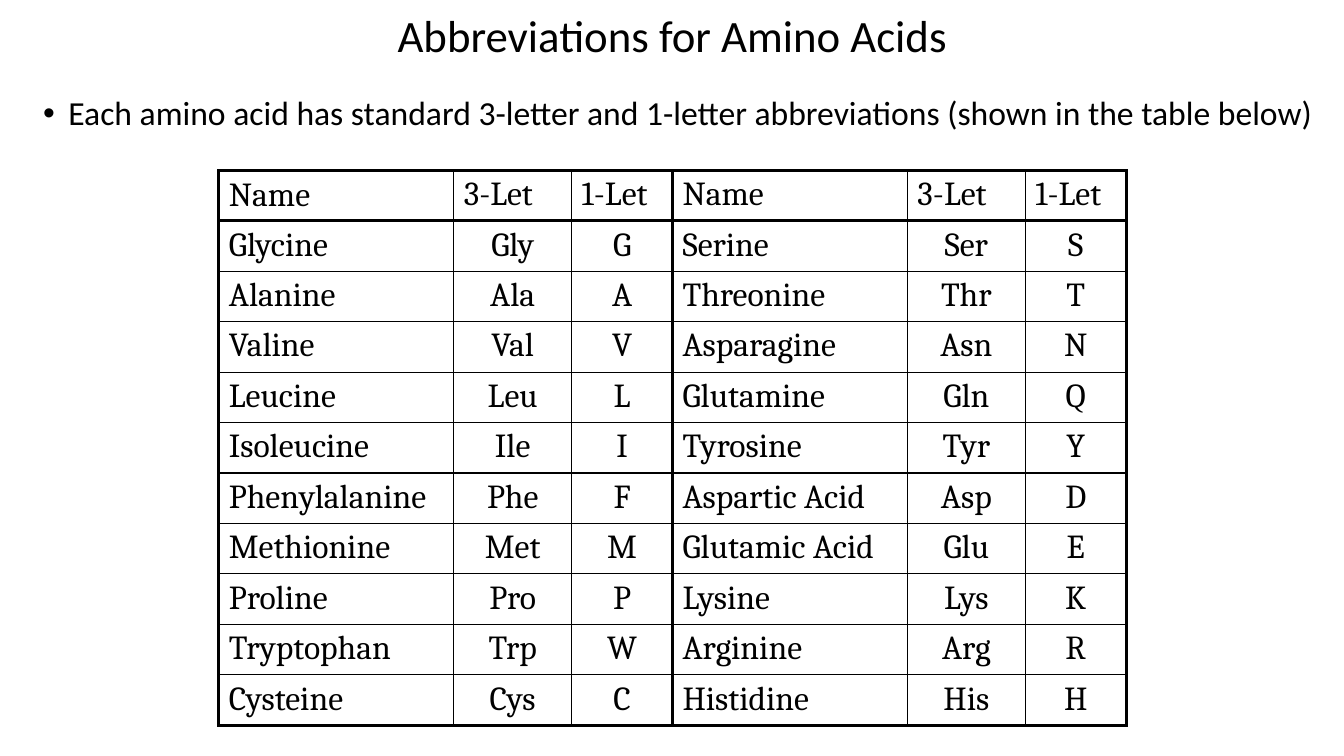
from lxml import etree
from pptx import Presentation
from pptx.dml.color import RGBColor
from pptx.enum.text import MSO_ANCHOR, MSO_AUTO_SIZE, PP_ALIGN
from pptx.oxml.ns import qn
from pptx.util import Inches, Pt

BLACK = RGBColor(0x00, 0x00, 0x00)
LEFT, CENTER = PP_ALIGN.LEFT, PP_ALIGN.CENTER
TOP, MIDDLE = MSO_ANCHOR.TOP, MSO_ANCHOR.MIDDLE
NO_AUTOFIT = MSO_AUTO_SIZE.NONE
TITLE_ONLY = 5
THIN, THICK = 1, 2.25

GROUP_WIDTHS = [2.33, 1.17, 1]
HEADINGS = ("Name", "3-Let", "1-Let")
LEFT_ACIDS = [
    ("Glycine", "Gly", "G"), ("Alanine", "Ala", "A"), ("Valine", "Val", "V"),
    ("Leucine", "Leu", "L"), ("Isoleucine", "Ile", "I"),
    ("Phenylalanine", "Phe", "F"), ("Methionine", "Met", "M"),
    ("Proline", "Pro", "P"), ("Tryptophan", "Trp", "W"), ("Cysteine", "Cys", "C"),
]
RIGHT_ACIDS = [
    ("Serine", "Ser", "S"), ("Threonine", "Thr", "T"), ("Asparagine", "Asn", "N"),
    ("Glutamine", "Gln", "Q"), ("Tyrosine", "Tyr", "Y"),
    ("Aspartic Acid", "Asp", "D"), ("Glutamic Acid", "Glu", "E"),
    ("Lysine", "Lys", "K"), ("Arginine", "Arg", "R"), ("Histidine", "His", "H"),
]


class SlideBuilder:
    """Holds the text style and the current slide."""

    heading_font = "Calibri"
    table_font = "Cambria"
    color = BLACK

    def __init__(self, presentation):
        self.slide = presentation.slides.add_slide(
            presentation.slide_layouts[TITLE_ONLY])

    def add_text(self, paragraph, text, font, size, align=LEFT):
        paragraph.alignment = align
        run = paragraph.add_run()
        run.text = text
        run.font.name = font
        run.font.size = Pt(size)
        run.font.color.rgb = self.color

    def title(self, text, left, top, width, height):
        shape = self.slide.shapes.title
        shape.left, shape.top = Inches(left), Inches(top)
        shape.width, shape.height = Inches(width), Inches(height)
        frame = shape.text_frame
        frame.auto_size = NO_AUTOFIT
        frame.vertical_anchor = MIDDLE
        paragraph = frame.paragraphs[0]
        paragraph.line_spacing = 0.9
        self.add_text(paragraph, text, self.heading_font, 32, CENTER)

    def bullet(self, text, left, top, width, height):
        shape = self.slide.shapes.add_textbox(
            Inches(left), Inches(top), Inches(width), Inches(height))
        frame = shape.text_frame
        frame.word_wrap = True
        paragraph = frame.paragraphs[0]
        paragraph.line_spacing = 0.9
        paragraph.space_before = Pt(10)
        self.add_text(paragraph, text, self.heading_font, 24)
        properties = paragraph._p.get_or_add_pPr()
        properties.set("marL", str(Inches(0.25)))
        properties.set("indent", str(-Inches(0.25)))
        etree.SubElement(properties, qn("a:buFont"), typeface="Arial")
        etree.SubElement(properties, qn("a:buChar"), char="•")

    def borders(self, cell, widths):
        properties = cell._tc.get_or_add_tcPr()
        for index, (side, width) in enumerate(widths.items()):
            line = etree.Element(qn(f"a:ln{side}"), w=str(Pt(width)))
            fill = etree.SubElement(line, qn("a:solidFill"))
            etree.SubElement(fill, qn("a:srgbClr"), val=str(self.color))
            properties.insert(index, line)

    def table(self, rows, column_widths, left, top, row_height):
        table = self.slide.shapes.add_table(
            len(rows), len(column_widths), Inches(left), Inches(top),
            Inches(sum(column_widths)), Inches(row_height * len(rows))).table
        table.first_row = table.horz_banding = False
        for column, width in zip(table.columns, column_widths):
            column.width = Inches(width)
        group = len(GROUP_WIDTHS)
        last = len(rows) - 1
        for r, values in enumerate(rows):
            for c, value in enumerate(values):
                cell = table.cell(r, c)
                cell.fill.background()
                cell.vertical_anchor = MIDDLE if r == c == 0 else TOP
                align = CENTER if r > 0 and c % group else LEFT
                self.add_text(cell.text_frame.paragraphs[0], value,
                              self.table_font, 24, align)
                # Thick lines frame the header and each group of columns
                self.borders(cell, {
                    "L": THICK if c % group == 0 else THIN,
                    "R": THICK if c % group == group - 1 else THIN,
                    "T": THICK if r <= 1 else THIN,
                    "B": THICK if r in (0, last) else THIN,
                })


def main():
    presentation = Presentation()
    presentation.slide_width = Inches(13.33)
    presentation.slide_height = Inches(7.5)
    builder = SlideBuilder(presentation)

    # Heading and introduction
    builder.title("Abbreviations for Amino Acids", 2.42, 0.17, 8.5, 0.42)
    builder.bullet("Each amino acid has standard 3-letter and 1-letter "
                   "abbreviations (shown in the table below)",
                   0.33, 0.91, 13, 0.51)

    # Two groups of amino acids side by side
    rows = [HEADINGS * 2]
    rows += [first + second for first, second in zip(LEFT_ACIDS, RIGHT_ACIDS)]
    builder.table(rows, GROUP_WIDTHS * 2, 2.17, 1.69, 0.48)

    presentation.save("out.pptx")


if __name__ == "__main__":
    main()
